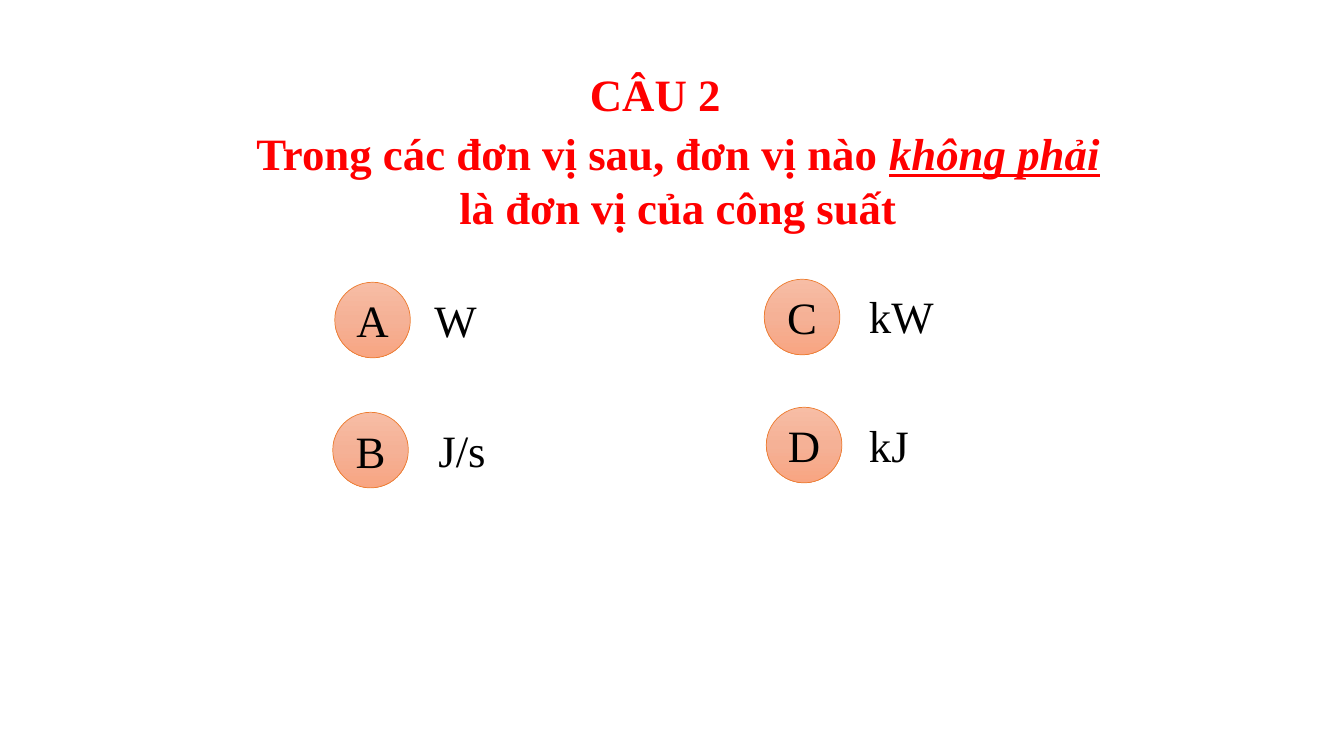
"""Builds a quiz slide with one question and four lettered answers."""
from copy import deepcopy
from dataclasses import dataclass

from pptx import Presentation
from pptx.dml.color import RGBColor as RGB
from pptx.enum.shapes import MSO_SHAPE as SHAPE
from pptx.enum.text import MSO_ANCHOR as ANCHOR, MSO_AUTO_SIZE as FIT, PP_ALIGN as ALIGN
from pptx.oxml.ns import qn
from pptx.util import Inches, Pt


@dataclass(frozen=True)
class Theme:
    font: str = "Times New Roman"
    size: float = 32
    question: str = "FF0000"
    answer: str = "000000"
    outline: str = "ED7D31"
    badge: tuple = ("F7BDA5", "F5B196", "F8A582")


T = Theme()
BADGE = 0.75
TEXT_H = 0.64
TEXT_DROP = 0.05


def add_run(p, text, color, bold=False, accent=False):
    r = p.add_run()
    r.text = text
    r.font.name = T.font
    r.font.size = Pt(T.size)
    r.font.bold = bold
    r.font.italic = r.font.underline = accent
    r.font.color.rgb = RGB.from_string(color)


def add_box(s, x, y, w, h):
    sp = s.shapes.add_textbox(Inches(x), Inches(y), Inches(w), Inches(h))
    sp.text_frame.word_wrap = True
    return sp.text_frame.paragraphs[0]


prs = Presentation()
prs.slide_width, prs.slide_height = Inches(13.33), Inches(7.5)
s = prs.slides.add_slide(prs.slide_layouts[5])

title = s.shapes.title
title.left, title.top = Inches(5.75), Inches(0.61)
title.width, title.height = Inches(1.67), Inches(TEXT_H)
tf = title.text_frame
tf.auto_size = FIT.NONE
tf.word_wrap = True
tf.vertical_anchor = ANCHOR.TOP
p = tf.paragraphs[0]
p.alignment = ALIGN.LEFT
add_run(p, "CÂU 2", T.question, bold=True)

p = add_box(s, 2.26, 1.2, 8.93, 1.18)
p.alignment = ALIGN.CENTER
for text, accent in [("Trong các đơn vị sau, đơn vị nào ", False),
                     ("không phải ", True),
                     ("là đơn vị của công suất", False)]:
    add_run(p, text, T.question, bold=True, accent=accent)

answers = [("A", "W", 3.32, 2.8, 4.21), ("B", "J/s", 3.3, 4.09, 4.25),
           ("C", "kW", 7.58, 2.77, 8.52), ("D", "kJ", 7.6, 4.04, 8.52)]
for letter, text, x, y, text_x in answers:
    add_run(add_box(s, text_x, y + TEXT_DROP, 1.33, TEXT_H), text, T.answer)

    sp = s.shapes.add_shape(SHAPE.OVAL, Inches(x), Inches(y), Inches(BADGE), Inches(BADGE))
    sp.shadow.inherit = False
    sp.line.color.rgb = RGB.from_string(T.outline)
    sp.line.width = Pt(0.5)
    sp.fill.gradient()
    sp.fill.gradient_angle = 270
    stops = sp._element.spPr.find(qn("a:gradFill")).find(qn("a:gsLst"))
    stops.insert(1, deepcopy(stops[0]))
    for i, (stop, color) in enumerate(zip(sp.fill.gradient_stops, T.badge)):
        stop.position = i / 2
        stop.color.rgb = RGB.from_string(color)
    tf = sp.text_frame
    tf.vertical_anchor = ANCHOR.MIDDLE
    tf.paragraphs[0].alignment = ALIGN.CENTER
    add_run(tf.paragraphs[0], letter, T.answer)

prs.save("out.pptx")
